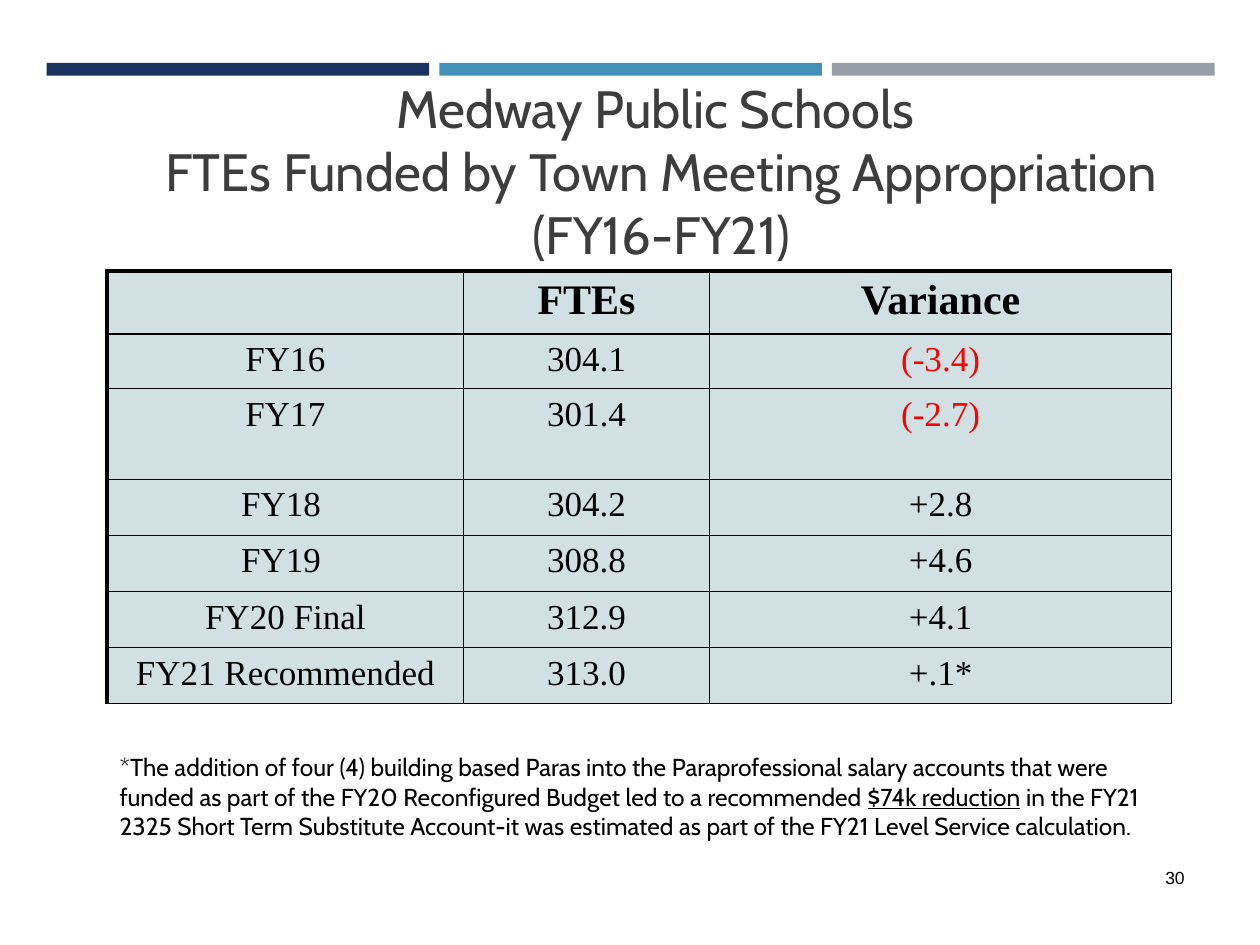
from lxml.etree import SubElement
from pptx import Presentation
from pptx.dml.color import RGBColor
from pptx.enum.shapes import MSO_SHAPE
from pptx.enum.text import MSO_ANCHOR, PP_ALIGN
from pptx.oxml.ns import qn
from pptx.util import Inches, Pt

COLORS = {
    "navy": "1A3260", "blue": "4590B8", "gray": "969FA7", "title": "3D3D3D",
    "cell": "D0E0E3", "black": "000000", "red": "FF0000",
}
COL_WIDTHS = [2.83, 1.95, 3.67]
ROW_HEIGHTS = [0.48, 0.41, 0.72] + [0.445] * 4
ROWS = [
    ("", "FTEs", "Variance"),
    ("FY16", "304.1", "(-3.4)"),
    ("FY17", "301.4", "(-2.7)"),
    ("FY18 ", "304.2", "+2.8"),
    ("FY19 ", "308.8", "+4.6"),
    ("FY20 Final", "312.9", "+4.1"),
    ("FY21 Recommended", "313.0", "+.1*"),
]
FOOTNOTE = [
    ("*The addition of four (4) building based Paras into the Paraprofessional "
     "salary accounts that were funded as part of the FY20 Reconfigured Budget "
     "led to a recommended ", False),
    ("$74k reduction", True),
    (" in the FY21 2325 Short Term Substitute Account-it was estimated as part "
     "of the FY21 Level Service calculation.", False),
]


def rgb(name):
    return RGBColor.from_string(COLORS[name])


def add_run(p, text, font, size, color="black", bold=False, underline=False):
    r = p.add_run()
    r.text = text
    r.font.name, r.font.size = font, Pt(size)
    r.font.bold, r.font.underline = bold, underline
    r.font.color.rgb = rgb(color)


def add_text_box(s, left, top, width, height, align, anchor=MSO_ANCHOR.TOP, pad=0.05):
    """Add an empty wrapping text box and return its first paragraph."""
    tf = s.shapes.add_textbox(Inches(left), Inches(top), Inches(width), Inches(height)).text_frame
    tf.word_wrap = True
    tf.vertical_anchor = anchor
    tf.margin_top = tf.margin_bottom = Inches(pad)
    p = tf.paragraphs[0]
    p.alignment = align
    return p


def add_bars(s, left, top, width, height, gap=0.08):
    names = ("navy", "blue", "gray")
    bar_width = (width - gap * (len(names) - 1)) / len(names)
    for i, name in enumerate(names):
        sp = s.shapes.add_shape(
            MSO_SHAPE.RECTANGLE, Inches(left + i * (bar_width + gap)), Inches(top),
            Inches(bar_width), Inches(height))
        sp.shadow.inherit = False
        sp.fill.solid()
        sp.fill.fore_color.rgb = rgb(name)
        sp.line.fill.background()


def add_title(s, left, top, width, height):
    p = add_text_box(s, left, top, width, height, PP_ALIGN.CENTER, MSO_ANCHOR.MIDDLE)
    add_run(p, "Medway Public Schools ", "Cabin", 30, "title")
    p.add_line_break()
    add_run(p, "FTEs Funded by Town Meeting Appropriation (FY16-FY21)", "Cabin", 30, "title")


def set_borders(cell, widths):
    tc_pr = cell._tc.get_or_add_tcPr()
    for i, (side, width) in enumerate(widths.items()):
        ln = SubElement(tc_pr, qn(f"a:ln{side}"), w=str(Pt(width)))
        fill = SubElement(ln, qn("a:solidFill"))
        SubElement(fill, qn("a:srgbClr"), val=COLORS["black"])
        tc_pr.insert(i, ln)  # borders precede the cell fill


def add_fte_table(s, left, top):
    table = s.shapes.add_table(
        len(ROWS), len(COL_WIDTHS), Inches(left), Inches(top),
        Inches(sum(COL_WIDTHS)), Inches(sum(ROW_HEIGHTS))).table
    for col, width in zip(table.columns, COL_WIDTHS):
        col.width = Inches(width)
    for i, (row, height) in enumerate(zip(ROWS, ROW_HEIGHTS)):
        table.rows[i].height = Inches(height)
        for j, text in enumerate(row):
            cell = table.cell(i, j)
            cell.fill.solid()
            cell.fill.fore_color.rgb = rgb("cell")
            set_borders(cell, {"L": 1 if j else 2.25, "R": 1, "T": 1 if i else 2.25, "B": 1})
            p = cell.text_frame.paragraphs[0]
            p.alignment = PP_ALIGN.CENTER
            if text:
                add_run(p, text, "Times New Roman", 20 if i else 24,
                        "red" if text.startswith("(-") else "black", bold=i == 0)


def add_footnote(s, left, top, width, height):
    p = add_text_box(s, left, top, width, height, PP_ALIGN.LEFT, pad=0.1)
    for text, underline in FOOTNOTE:
        add_run(p, text, "Cabin", 14, underline=underline)


def add_page_number(s, left, top, width, height):
    p = add_text_box(s, left, top, width, height, PP_ALIGN.RIGHT)
    add_run(p, "30", "Arial", 10)


def main():
    prs = Presentation()
    prs.slide_width, prs.slide_height = Inches(10), Inches(7.5)
    s = prs.slides.add_slide(prs.slide_layouts[6])
    add_bars(s, 0.37, 0.5, 9.27, 0.1)
    add_title(s, 1, 0.65, 8.5, 1.4)
    add_fte_table(s, 0.85, 2.15)
    add_page_number(s, 7.42, 6.83, 2.08, 0.5)
    add_footnote(s, 0.85, 5.87, 8.31, 0.92)
    prs.save("out.pptx")


if __name__ == "__main__":
    main()
